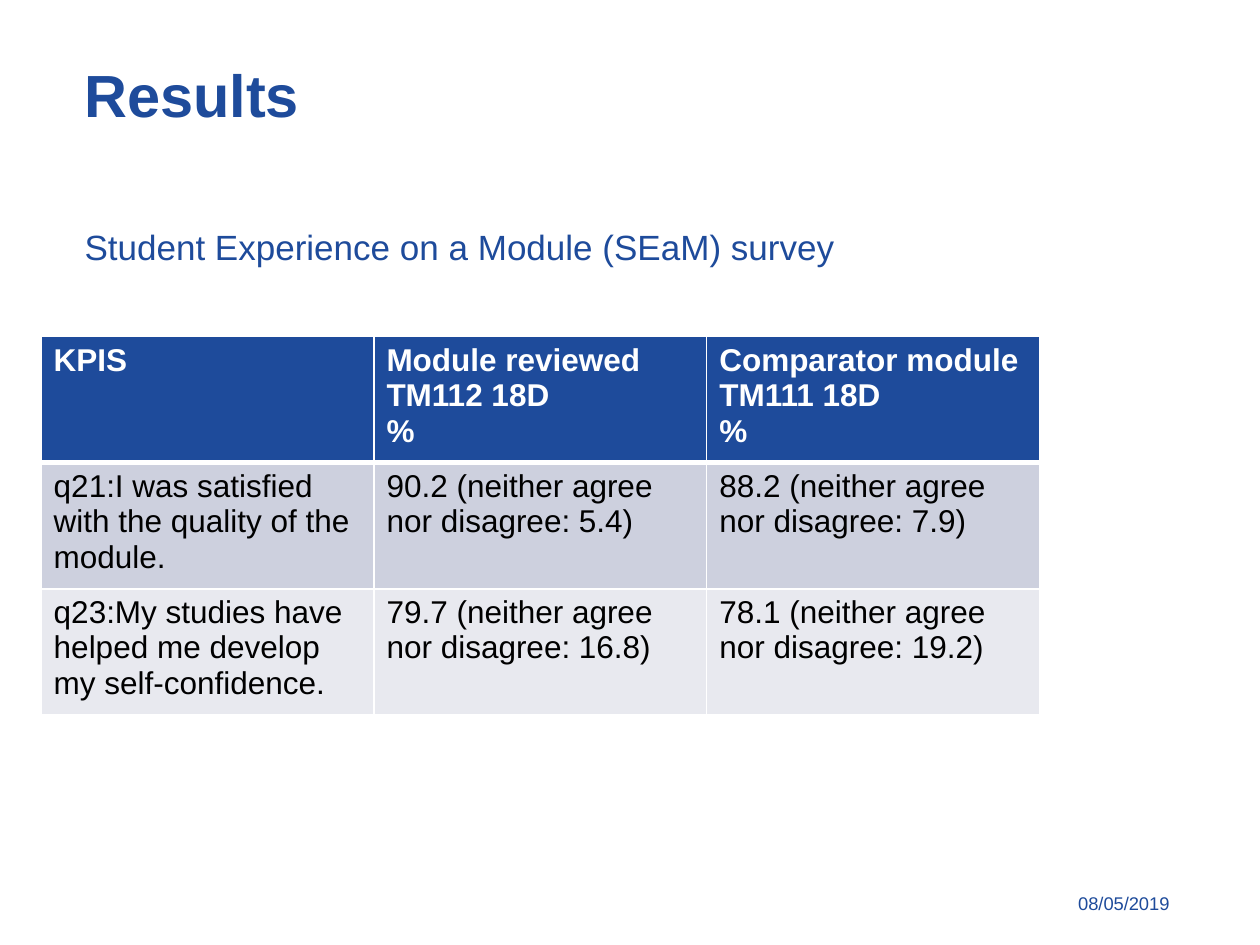
from pptx import Presentation
from pptx.dml.color import RGBColor
from pptx.enum.text import MSO_ANCHOR, MSO_AUTO_SIZE, PP_ALIGN
from pptx.oxml.ns import qn
from pptx.util import Pt
from lxml.etree import SubElement

COLORS = {"blue": "1E4B9B", "white": "FFFFFF", "black": "000000",
          "band_dark": "CDD0DE", "band_light": "E8E9EF"}
FONT = "Arial"
ROWS = [
    ["KPIS", "Module reviewed TM112 18D\n%", "Comparator module TM111 18D\n%"],
    ["q21:I was satisfied with the quality of the module.",
     "90.2 (neither agree nor disagree: 5.4)",
     "88.2 (neither agree nor disagree: 7.9)"],
    ["q23:My studies have helped me develop my self-confidence.",
     "79.7 (neither agree nor disagree: 16.8)",
     "78.1 (neither agree nor disagree: 19.2)"],
]


class Deck:
    """Holds the slide and the shared text style."""

    def __init__(self):
        self.prs = Presentation()
        self.prs.slide_width, self.prs.slide_height = Pt(720), Pt(540)
        self.s = self.prs.slides.add_slide(self.prs.slide_layouts[1])

    def style(self, tf, size, color="blue", bold=False, align=PP_ALIGN.LEFT):
        for p in tf.paragraphs:
            p.alignment = align
            p.space_before = Pt(0)
            for r in p.runs:
                r.font.name, r.font.size, r.font.bold = FONT, Pt(size), bold
                r.font.color.rgb = RGBColor.from_string(COLORS[color])

    def placeholder(self, sp, text, box, size, anchor, inset_top, bold=False):
        sp.left, sp.top, sp.width, sp.height = map(Pt, box)
        tf = sp.text_frame
        tf.text = text
        tf.word_wrap = True
        tf.auto_size = MSO_AUTO_SIZE.NONE
        tf.vertical_anchor = anchor
        tf.margin_left, tf.margin_top = Pt(2.9), Pt(inset_top)
        tf.margin_right, tf.margin_bottom = Pt(1.4), Pt(2.9)
        self.style(tf, size, bold=bold)
        return tf.paragraphs[0]

    def title(self, text):
        p = self.placeholder(self.s.shapes.title, text, (45.4, 36.7, 469.4, 69.1),
                             34, MSO_ANCHOR.TOP, 2.9, bold=True)
        p.line_spacing = 0.85

    def subtitle(self, text):
        p = self.placeholder(self.s.placeholders[1], text, (45.4, 115.2, 469.4, 42.5),
                             20, MSO_ANCHOR.MIDDLE, 11.5)
        pPr = p._p.get_or_add_pPr()
        pPr.set("marL", "0")
        pPr.set("indent", "0")
        SubElement(pPr, qn("a:buNone"))

    def date(self, text):
        tf = self.s.shapes.add_textbox(Pt(597.6), Pt(506.2), Pt(77.8), Pt(20.2)).text_frame
        tf.text = text
        tf.word_wrap = True
        self.style(tf, 10.5, align=PP_ALIGN.RIGHT)

    def borders(self, cell, bottom_width, top_width):
        tcPr = cell._tc.get_or_add_tcPr()
        widths = {"a:lnL": 1, "a:lnR": 1, "a:lnT": top_width, "a:lnB": bottom_width}
        for tag, width in widths.items():
            ln = SubElement(tcPr, qn(tag), w=str(Pt(width)))
            fill = SubElement(ln, qn("a:solidFill"))
            SubElement(fill, qn("a:srgbClr"), val=COLORS["white"])

    def table(self, rows, left, top, col_width, row_height):
        n_cols = len(rows[0])
        table = self.s.shapes.add_table(len(rows), n_cols, Pt(left), Pt(top),
                                        Pt(col_width * n_cols),
                                        Pt(row_height * len(rows))).table
        fills = ["blue", "band_dark", "band_light"]
        for i, row in enumerate(rows):
            header = i == 0
            for j, text in enumerate(row):
                cell = table.cell(i, j)
                cell.text_frame.text = text
                self.style(cell.text_frame, 18, "white" if header else "black", header)
                self.borders(cell, 3 if header else 1, 3 if i == 1 else 1)
                cell.fill.solid()
                cell.fill.fore_color.rgb = RGBColor.from_string(COLORS[fills[i]])


def main():
    deck = Deck()
    deck.date("08/05/2019")
    deck.title("Results")
    deck.subtitle("Student Experience on a Module (SEaM) survey")
    deck.table(ROWS, 23.5, 192.4, 190.2, 67.5)
    deck.prs.save("out.pptx")


if __name__ == "__main__":
    main()
